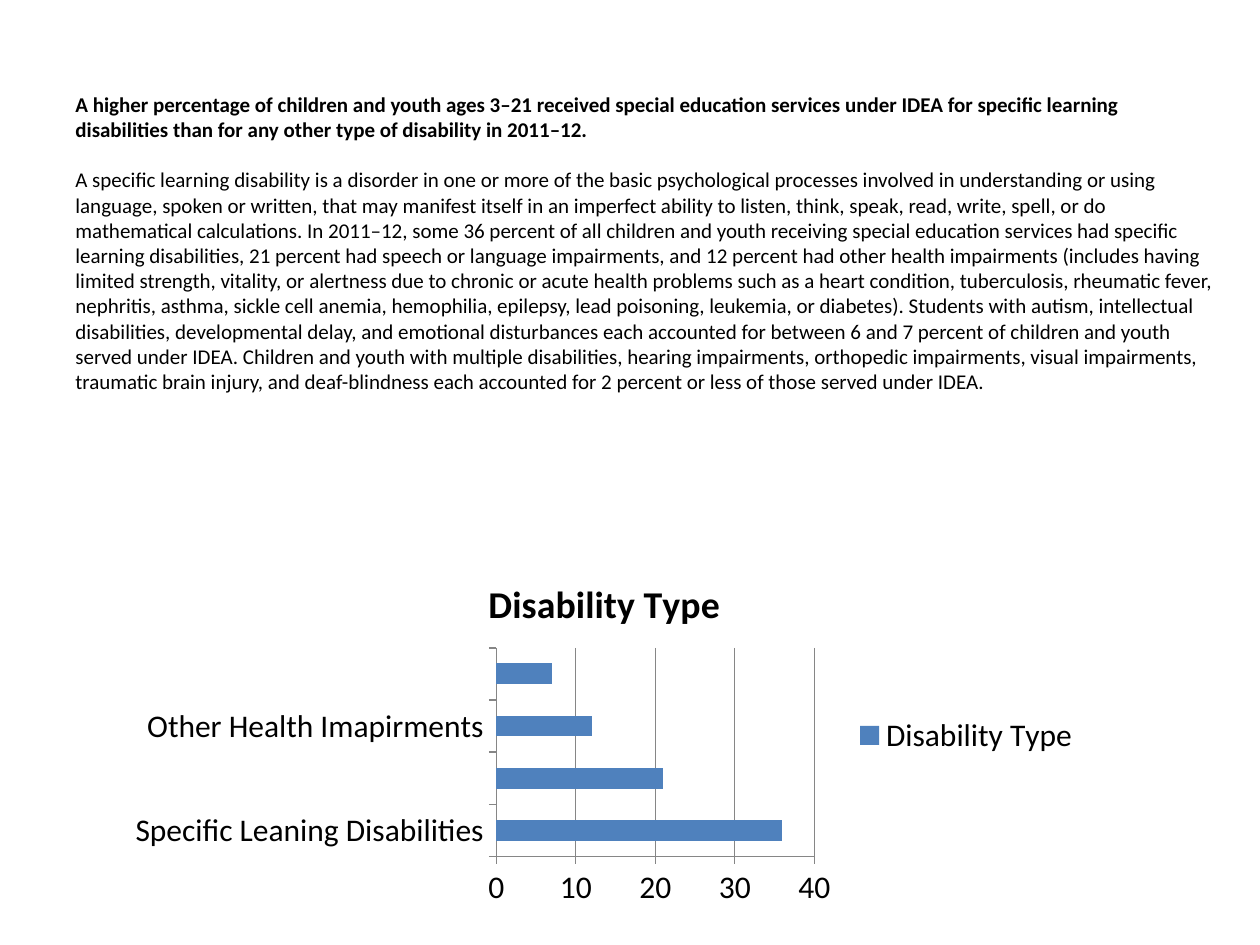
import pptx
import pptx.chart.data
import pptx.dml.color
import pptx.enum.chart
import pptx.enum.text
import pptx.util

PX = 914400 // 126
FONT = "Calibri"
HEADLINE = (
    "A higher percentage of children and youth ages 3–21 received special education services "
    "under IDEA for specific learning disabilities than for any other type of disability in 2011–12."
)
EXPLANATION = [
    "A specific learning disability is a disorder in one or more of the basic psychological "
    "processes involved in understanding or using language, spoken or written, that may manifest "
    "itself in an imperfect ability to listen, think, speak, read, write, spell, or do mathematical "
    "calculations.",
    "In 2011–12, some 36 percent of all children and youth receiving special education "
    "services had specific learning disabilities, 21 percent had speech or language impairments, and "
    "12 percent had other health impairments (includes having limited strength, vitality, or "
    "alertness due to chronic or acute health problems such as a heart condition, tuberculosis, "
    "rheumatic fever, nephritis, asthma, sickle cell anemia, hemophilia, epilepsy, lead poisoning, "
    "leukemia, or diabetes).",
    "Students with autism, intellectual disabilities, developmental delay, "
    "and emotional disturbances each accounted for between 6 and 7 percent of children and youth "
    "served under IDEA.",
    "Children and youth with multiple disabilities, hearing impairments, "
    "orthopedic impairments, visual impairments, traumatic brain injury, and deaf-blindness each "
    "accounted for 2 percent or less of those served under IDEA.",
]
DISABILITIES = {
    "Specific Leaning Disabilities": 36,
    "Specific or Language Impairments": 21,
    "Other Health Imapirments": 12,
    "Autism": 7,
}


def box(*lengths):
    """Turn pixel lengths into EMU."""
    return [pptx.util.Emu(length * PX) for length in lengths]


def color(value):
    """Return the colour for a hex string."""
    return pptx.dml.color.RGBColor.from_string(value)


def style_font(font, size, bold=False):
    """Set the typeface, size, weight and black colour."""
    font.name = FONT
    font.size = pptx.util.Pt(size)
    font.bold = bold
    font.color.rgb = color("000000")


def add_paragraph(paragraph, words, bold, space_after=0):
    """Fill a paragraph with one styled run."""
    run = paragraph.add_run()
    run.text = words
    style_font(run.font, 12, bold)
    paragraph.space_after = pptx.util.Pt(space_after)


def add_summary(slide):
    """Add the bold finding and its explanation."""
    frame = slide.shapes.add_textbox(*box(63, 38, 1166, 362)).text_frame
    frame.word_wrap = True
    frame.vertical_anchor = pptx.enum.text.MSO_ANCHOR.BOTTOM
    add_paragraph(frame.paragraphs[0], HEADLINE, True, 14.5)
    add_paragraph(frame.add_paragraph(), " ".join(EXPLANATION), False)


def style_axis(axis, gridlines):
    """Give an axis grey lines and outside ticks."""
    axis.major_tick_mark = pptx.enum.chart.XL_TICK_MARK.OUTSIDE
    axis.minor_tick_mark = pptx.enum.chart.XL_TICK_MARK.NONE
    axis.has_major_gridlines = gridlines
    lines = [axis.format.line]
    if gridlines:
        lines.append(axis.major_gridlines.format.line)
    for line in lines:
        line.color.rgb = color("868686")
        line.width = pptx.util.Pt(0.75)


def add_disability_chart(slide):
    """Add the bar chart of disability types."""
    shares = pptx.chart.data.CategoryChartData()
    shares.categories = list(DISABILITIES)
    shares.add_series("Disability Type", list(DISABILITIES.values()))
    chart = slide.shapes.add_chart(
        pptx.enum.chart.XL_CHART_TYPE.BAR_CLUSTERED, *box(116, 557, 977, 357), shares
    ).chart
    style_font(chart.font, 18)

    chart.has_title = True
    title = chart.chart_title.text_frame.paragraphs[0].add_run()
    title.text = "Disability Type"
    style_font(title.font, 21.6, True)
    chart.chart_title.include_in_layout = False

    chart.has_legend = True
    chart.legend.position = pptx.enum.chart.XL_LEGEND_POSITION.RIGHT
    chart.legend.include_in_layout = False

    style_axis(chart.category_axis, False)
    style_axis(chart.value_axis, True)

    plot = chart.plots[0]
    plot.gap_width = 150
    plot.vary_by_categories = False
    bars = plot.series[0].format.fill
    bars.solid()
    bars.fore_color.rgb = color("4F81BD")


def main():
    """Build and save the slide."""
    deck = pptx.Presentation()
    deck.slide_width, deck.slide_height = box(1260, 945)
    slide = deck.slides.add_slide(deck.slide_layouts[6])
    add_summary(slide)
    add_disability_chart(slide)
    deck.save("out.pptx")


if __name__ == "__main__":
    main()
